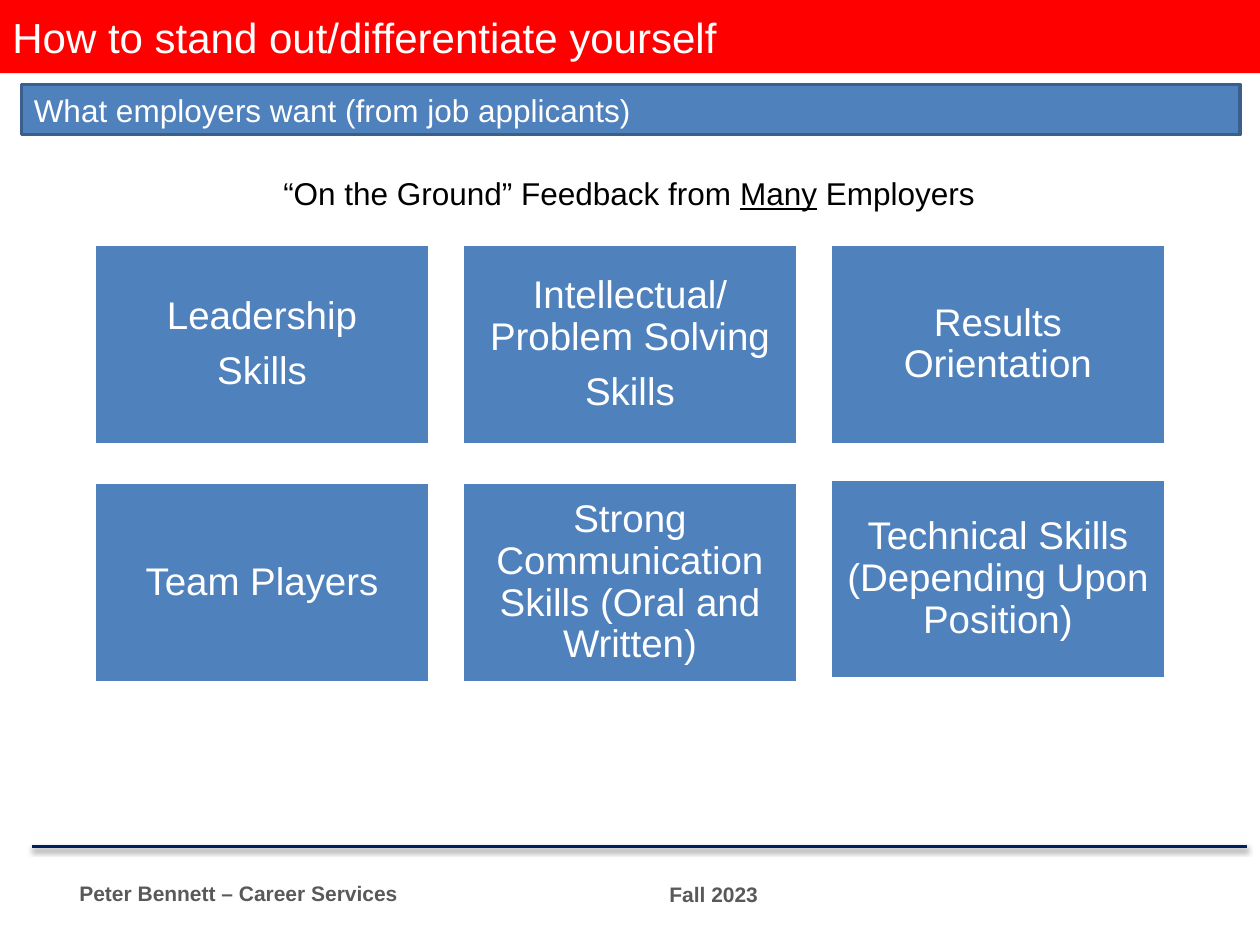
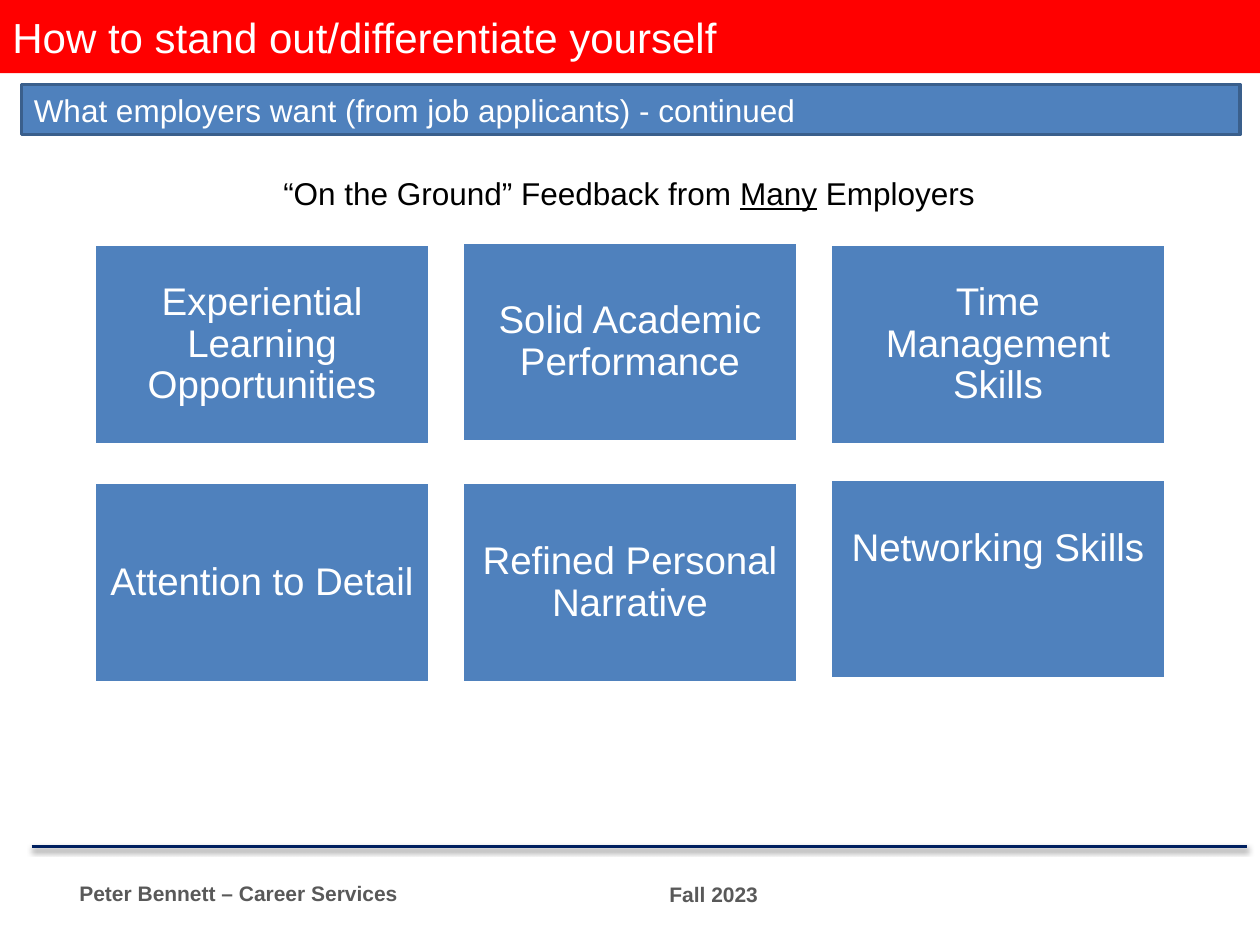
from dataclasses import dataclass

from lxml.etree import SubElement
from pptx import Presentation
from pptx.dml.color import RGBColor as RGB
from pptx.enum.shapes import MSO_CONNECTOR as CONN, MSO_SHAPE as SHAPE
from pptx.enum.text import MSO_ANCHOR as ANCHOR, PP_ALIGN as ALIGN
from pptx.oxml.ns import qn
from pptx.util import Inches, Pt


@dataclass(frozen=True)
class Theme:
    font: str = "Arial"
    red: str = "FF0000"
    blue: str = "4F81BD"
    edge: str = "3A5F8C"
    navy: str = "002060"
    gray: str = "595959"
    white: str = "FFFFFF"
    black: str = "000000"
    title: int = 24
    card: int = 22
    body: int = 18
    footer: int = 12


@dataclass(frozen=True)
class Card:
    lines: tuple
    dy: float = 0
    bottom: float = 0.09


T = Theme()
TITLE = "How to stand out/differentiate yourself"
FEEDBACK = (("“On the Ground” Feedback from ", False), ("Many", True), (" Employers", False))
FOOTERS = (("Peter Bennett – Career Services", 0.31, 6.89), ("Fall 2023", 4.08, 6.9))

SLIDES = (
    ("What employers want (from job applicants)", (
        Card(("Leadership", "Skills")),
        Card(("Intellectual/ Problem Solving", "Skills")),
        Card(("Results Orientation",)),
        Card(("Team Players",)),
        Card(("Strong Communication Skills (Oral and Written)",)),
        Card(("Technical Skills (Depending Upon Position)",), dy=-0.03),
    )),
    ("What employers want (from job applicants) - continued", (
        Card(("Experiential Learning Opportunities",)),
        Card(("Solid Academic Performance",), dy=-0.02),
        Card(("Time Management Skills",)),
        Card(("Attention to Detail",)),
        Card(("Refined Personal Narrative",)),
        Card(("Networking Skills",), dy=-0.03, bottom=0.57),
    )),
)


def inches(box):
    return [Inches(v) for v in box]


def apply(target, formats):
    for name, value in formats.items():
        setattr(target, name, value)


def add_rect(s, box, fill, line=None):
    sp = s.shapes.add_shape(SHAPE.RECTANGLE, *inches(box))
    sp.shadow.inherit = False
    sp.fill.solid()
    sp.fill.fore_color.rgb = RGB.from_string(fill)
    if line:
        sp.line.color.rgb = RGB.from_string(line)
        sp.line.width = Pt(2)
    else:
        sp.line.fill.background()
    return sp


def write(sp, paragraphs, size, color, align=ALIGN.LEFT, anchor=ANCHOR.MIDDLE,
          bold=False, frame=None, spacing=None):
    tf = sp.text_frame
    apply(tf, {"word_wrap": True, "vertical_anchor": anchor, **(frame or {})})
    for i, runs in enumerate(paragraphs):
        p = tf.add_paragraph() if i else tf.paragraphs[0]
        apply(p, {"alignment": align, **(spacing or {})})
        for text, underline in runs:
            r = p.add_run()
            r.text = text
            apply(r.font, {"name": T.font, "size": Pt(size), "bold": bold,
                           "underline": underline})
            r.font.color.rgb = RGB.from_string(color)


def plain(*lines):
    return [[(line, False)] for line in lines]


def add_footer(s):
    rule = s.shapes.add_connector(CONN.STRAIGHT, *inches((0.25, 6.72, 9.9, 6.72)))
    rule.line.color.rgb = RGB.from_string(T.navy)
    rule.line.width = Pt(2)
    effects = SubElement(rule._element.spPr, qn("a:effectLst"))
    shadow = SubElement(effects, qn("a:outerShdw"), blurRad="40000", dist="20000",
                        dir="5400000", rotWithShape="0")
    tint = SubElement(shadow, qn("a:srgbClr"), val=T.black)
    SubElement(tint, qn("a:alpha"), val="38000")
    for text, left, top in FOOTERS:
        sp = s.shapes.add_textbox(*inches((left, top, 3.17, 0.4)))
        write(sp, plain(text), T.footer, T.gray, ALIGN.CENTER, bold=True)


def add_header(s, subtitle):
    write(add_rect(s, (0, 0, 10, 0.58), T.red), plain(TITLE), T.title, T.white)
    write(add_rect(s, (0.17, 0.67, 9.67, 0.4), T.blue, T.edge), plain(subtitle),
          T.body, T.white, anchor=ANCHOR.TOP)
    sp = s.shapes.add_textbox(*inches((2.15, 1.33, 5.7, 0.4)))
    write(sp, [FEEDBACK], T.body, T.black, anchor=ANCHOR.TOP)


def add_cards(s, box, cards, columns=3, width=2.66, height=1.59):
    left, top, total_width, total_height = box
    rows = len(cards) // columns
    step_x = (total_width - width) / (columns - 1)
    step_y = (total_height - height) / (rows - 1)
    side = Inches(0.09)
    for i, card in enumerate(cards):
        row, column = divmod(i, columns)
        place = (left + column * step_x, top + row * step_y + card.dy, width, height)
        write(add_rect(s, place, T.blue, T.white), plain(*card.lines), T.card, T.white,
              ALIGN.CENTER,
              frame={"margin_left": side, "margin_right": side, "margin_top": side,
                     "margin_bottom": Inches(card.bottom)},
              spacing={"line_spacing": 0.9, "space_after": Pt(7.7)})


def add_employer_slide(prs, subtitle, cards):
    s = prs.slides.add_slide(prs.slide_layouts[6])
    add_footer(s)
    add_header(s, subtitle)
    add_cards(s, (0.75, 1.94, 8.5, 3.48), cards)


def main():
    prs = Presentation()
    apply(prs, {"slide_width": Inches(10), "slide_height": Inches(7.5)})
    for subtitle, cards in SLIDES:
        add_employer_slide(prs, subtitle, cards)
    prs.save("out.pptx")


if __name__ == "__main__":
    main()
